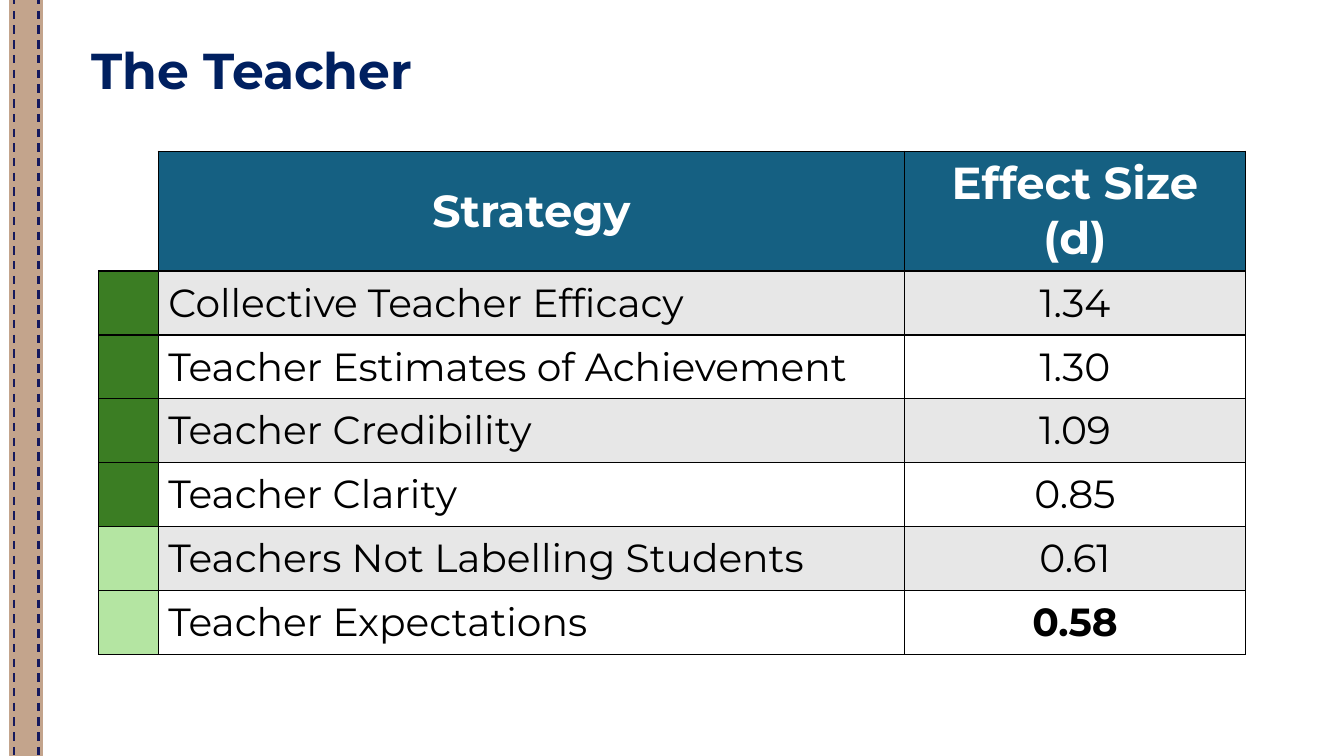
from lxml.etree import SubElement
from pptx import Presentation
from pptx.dml.color import RGBColor
from pptx.enum.dml import MSO_LINE
from pptx.enum.shapes import MSO_CONNECTOR, MSO_SHAPE
from pptx.enum.text import MSO_ANCHOR, PP_ALIGN
from pptx.oxml.ns import qn
from pptx.util import Cm, Pt

TAN = RGBColor(0xC3, 0xA4, 0x8C)
STITCH_BLUE = RGBColor(0x15, 0x19, 0x5D)
NAVY = RGBColor(0x00, 0x20, 0x60)
TEAL = RGBColor(0x15, 0x60, 0x82)
DARK_GREEN = RGBColor(0x3B, 0x7D, 0x23)
LIGHT_GREEN = RGBColor(0xB4, 0xE5, 0xA2)
GREY = RGBColor(0xE7, 0xE7, 0xE7)
WHITE = RGBColor(0xFF, 0xFF, 0xFF)
BLACK = RGBColor(0x00, 0x00, 0x00)

TITLE_FORMAT = {"name": "Montserrat", "size": Pt(36), "bold": True}
HEADER_FORMAT = {"name": "Montserrat", "size": Pt(32), "bold": True}
BODY_FORMAT = {"name": "Montserrat", "size": Pt(28), "bold": False}


def write(paragraph, text, font_format, color):
    run = paragraph.add_run()
    run.text = text
    for attribute, value in font_format.items():
        setattr(run.font, attribute, value)
    run.font.color.rgb = color


def add_borders(cell, sides):
    properties = cell._tc.get_or_add_tcPr()
    for side in "LRTB":
        visible = side in sides
        border = SubElement(properties, qn(f"a:ln{side}"), w=str(Pt(1)))
        fill = SubElement(border, qn("a:solidFill" if visible else "a:noFill"))
        if visible:
            SubElement(fill, qn("a:srgbClr"), val=str(BLACK))


presentation = Presentation()
presentation.slide_width = Cm(33.87)
presentation.slide_height = Cm(19.05)
slide = presentation.slides.add_slide(presentation.slide_layouts[6])

# Stitched ribbon on the left edge
ribbon = slide.shapes.add_shape(
    MSO_SHAPE.RECTANGLE, Cm(0.25), Cm(-0.02), Cm(0.82), Cm(19.07))
ribbon.shadow.inherit = False
ribbon.fill.solid()
ribbon.fill.fore_color.rgb = TAN
ribbon.line.color.rgb = TAN
ribbon.line.width = Pt(0.75)

for x in (0.36, 0.97):
    stitch = slide.shapes.add_connector(
        MSO_CONNECTOR.STRAIGHT, Cm(x), Cm(-0.1), Cm(x), Cm(19.13))
    stitch.line.color.rgb = STITCH_BLUE
    stitch.line.width = Pt(1.5)
    stitch.line.dash_style = MSO_LINE.DASH
    SubElement(stitch._element.spPr, qn("a:effectLst"))

# Title
title = slide.shapes.add_textbox(Cm(2.06), Cm(1.04), Cm(29.57), Cm(2.06))
title.text_frame.word_wrap = True
heading = title.text_frame.paragraphs[0]
heading.line_spacing = 0.9
write(heading, "The Teacher", TITLE_FORMAT, NAVY)

# Strategies: rating colour, name, effect size, bold effect size
strategies = [
    (DARK_GREEN, "Collective Teacher Efficacy", "1.34", False),
    (DARK_GREEN, "Teacher Estimates of Achievement", "1.30", False),
    (DARK_GREEN, "Teacher Credibility", "1.09", False),
    (DARK_GREEN, "Teacher Clarity", "0.85", False),
    (LIGHT_GREEN, "Teachers Not Labelling Students", "0.61", False),
    (LIGHT_GREEN, "Teacher Expectations", "0.58", True),
]
column_widths = [1.5, 18.8, 8.6]
row_heights = [3.02] + [1.61] * len(strategies)

# Effect size table
effects = slide.shapes.add_table(
    len(row_heights), len(column_widths), Cm(2.49), Cm(3.81),
    Cm(sum(column_widths)), Cm(sum(row_heights))).table
effects.horz_banding = False
for column, width in zip(effects.columns, column_widths):
    column.width = Cm(width)
for row, height in zip(effects.rows, row_heights):
    row.height = Cm(height)

# Header row, with an open corner cell
corner = effects.cell(0, 0)
add_borders(corner, "RB")
corner.fill.background()
for column, label in enumerate(["Strategy", "Effect Size (d)"], start=1):
    header = effects.cell(0, column)
    add_borders(header, "LRTB")
    header.fill.solid()
    header.fill.fore_color.rgb = TEAL
    header.vertical_anchor = MSO_ANCHOR.MIDDLE
    header.text_frame.paragraphs[0].alignment = PP_ALIGN.CENTER
    write(header.text_frame.paragraphs[0], label, HEADER_FORMAT, WHITE)

# Strategy rows
for row, (rating, strategy, effect, emphasis) in enumerate(strategies, start=1):
    band = GREY if row % 2 else WHITE
    cells = [
        (rating, "", PP_ALIGN.LEFT, False),
        (band, strategy, PP_ALIGN.LEFT, False),
        (band, effect, PP_ALIGN.CENTER, emphasis),
    ]
    for column, (color, text, alignment, bold) in enumerate(cells):
        cell = effects.cell(row, column)
        add_borders(cell, "LRTB")
        cell.fill.solid()
        cell.fill.fore_color.rgb = color
        cell.vertical_anchor = MSO_ANCHOR.MIDDLE
        if text:
            paragraph = cell.text_frame.paragraphs[0]
            paragraph.alignment = alignment
            write(paragraph, text, {**BODY_FORMAT, "bold": bold}, BLACK)

presentation.save("out.pptx")
